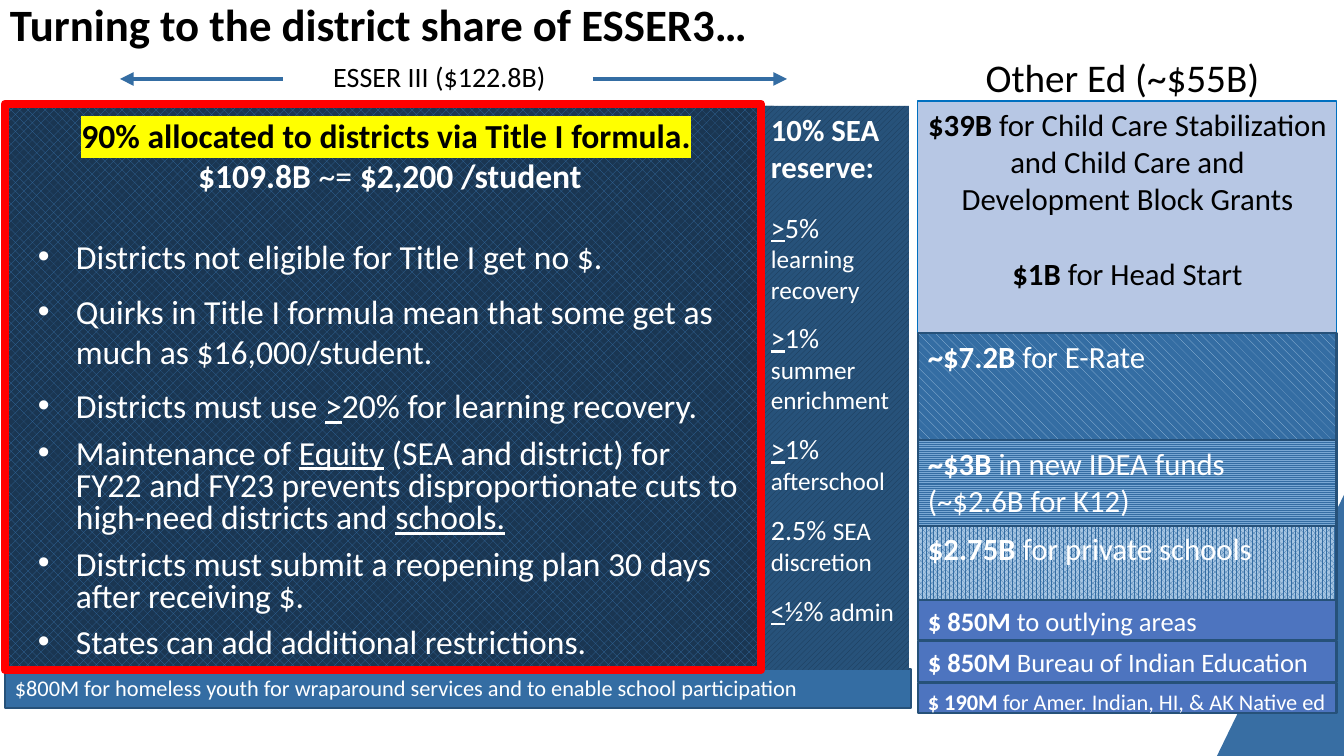
from lxml import etree
from pptx import Presentation, util as u
from pptx.dml.color import RGBColor
from pptx.enum import dml, shapes, text
from pptx.oxml.ns import qn

PX = 914400 / 100.8
COLORS = {
    "white": "FFFFFF", "black": "000000", "blue": "346DA3", "corner": "386EA3", "navy": "1A3652",
    "edge": "265179", "steel": "27527A", "royal": "4D74BF", "lilac": "B7C7E4", "lilac_edge": "0070C0",
    "sky": "A6C5E2", "mist": "79A8D4", "red": "FF0000", "yellow": "FFFF00",
}
PATTERN = dml.MSO_PATTERN
PERCENT_40 = PATTERN(6)
CENTER = {"alignment": text.PP_ALIGN.CENTER}
TIGHT = {"line_spacing": 0.8}
B = {"bold": True}
U = {"underline": True}

CHILD_CARE = [("$39B ", "for Child Care Stabilization and Child Care and Development Block Grants", {}),
              ("$1B ", "for Head Start", {"space_before": u.Pt(27)})]
FUNDS = [
    (333, 108, 22, (PATTERN.DASHED_DOWNWARD_DIAGONAL, "sky", "blue"), "~$7.2B ", "for E-Rate"),
    (525, 75, 22, (PATTERN.PERCENT_75, "blue", "sky"), "$2.75B ", "for private schools"),
    (440, 86, 22, (PATTERN.NARROW_HORIZONTAL, "blue", "mist"), "~$3B ",
     "in new IDEA funds\n(~$2.6B for K12)"),
    (600, 40, 19, "royal", "$ 850M ", "to outlying areas"),
    (641, 41, 19, "royal", "$ 850M ", "Bureau of Indian Education"),
    (683, 30, 16, "royal", "$ 190M ", "for Amer. Indian, HI, & AK Native ed"),
]
HEADLINES = [
    [("90% allocated to districts via Title I formula.",
      {"bold": True, "color": "black", "highlight": "yellow"}), (" ", B)],
    [("$109.8B ", B), ("~= ", {}), ("$2,200 /student", B)],
]
RULES = [
    ({"space_before": u.Pt(29)}, [("Districts not eligible for Title I get no $.", {})]),
    ({}, [("Quirks in Title I formula mean that some get as much as $16,000/student.", {})]),
    ({}, [("Districts must use ", {}), (">", U), ("20% for learning recovery.", {})]),
    (TIGHT, [("Maintenance of ", {}), ("Equity", U),
             (" (SEA and district) for FY22 and FY23 prevents disproportionate cuts to "
              "high-need districts and ", {}), ("schools.", U)]),
    (TIGHT, [("Districts must submit a reopening plan 30 days after receiving $.", {})]),
    (TIGHT, [("States can add additional restrictions.", {})]),
]
RESERVES = [(">", "5% ", "learning recovery"), (">", "1%", "\nsummer enrichment"),
            (">", "1% ", "afterschool"), ("", "2.5% ", "SEA discretion"), ("<", "½%", " admin")]


def px(value):
    """Turn pixels into EMU."""
    return u.Emu(round(value * PX))


def rgb(name):
    """Look up a named colour."""
    return RGBColor.from_string(COLORS[name])


def apply(target, values):
    """Set each attribute in a dict of format values."""
    for name, value in values.items():
        setattr(target, name, value)


def paint(fill, style):
    """Fill with nothing, one colour, or a (pattern, front, back) triple."""
    if style is None:
        fill.background()
    elif isinstance(style, str):
        fill.solid()
        fill.fore_color.rgb = rgb(style)
    else:
        fill.patterned()
        fill.pattern, fill.fore_color.rgb, fill.back_color.rgb = style[0], rgb(style[1]), rgb(style[2])


def finish(shape, fill, edge=None, width=2):
    """Make a shape flat, with its fill and line."""
    shape.shadow.inherit = False
    paint(shape.fill, fill)
    paint(shape.line.fill, edge)
    if edge:
        shape.line.width = u.Pt(width)


def prepare(box):
    """Set the text frame to wrap from the top at a fixed size."""
    apply(box.text_frame, {"word_wrap": True, "auto_size": text.MSO_AUTO_SIZE.NONE,
                           "vertical_anchor": text.MSO_ANCHOR.TOP})
    return box


def add_box(page, area, fill=None, edge=None, width=2):
    """Add a flat rectangle."""
    box = page.shapes.add_shape(shapes.MSO_SHAPE.RECTANGLE, *map(px, area))
    finish(box, fill, edge, width)
    return prepare(box)


def add_label(page, area):
    """Add a wrapping text box."""
    return prepare(page.shapes.add_textbox(*map(px, area)))


def add_span(para, content, size, color="white", highlight=None, **style):
    """Add formatted runs, breaking lines at newlines."""
    for index, piece in enumerate(content.split("\n")):
        if index:
            para.add_line_break()
        if not piece:
            continue
        span = para.add_run()
        span.text = piece
        apply(span.font, {"size": u.Pt(size), "bold": False, "name": "Calibri", **style})
        span.font.color.rgb = rgb(color)
        if highlight:
            mark = etree.Element(qn("a:highlight"))
            etree.SubElement(mark, qn("a:srgbClr"), val=COLORS[highlight])
            span._r.rPr.find(qn("a:solidFill")).addnext(mark)


def add_para(box, spans, size, color="white", bullet=False, **layout):
    """Write a paragraph of spans, using the empty first one if free."""
    para = box.text_frame.paragraphs[0]
    if para.runs:
        para = box.text_frame.add_paragraph()
    if bullet:
        props = para._p.get_or_add_pPr()
        props.set("marL", str(px(38)))
        props.set("indent", str(-px(38)))
        etree.SubElement(props, qn("a:buFont"), typeface="Arial")
        etree.SubElement(props, qn("a:buChar"), char="•")
    apply(para, {"alignment": text.PP_ALIGN.LEFT, **layout})
    for content, style in spans:
        add_span(para, content, **{"size": size, "color": color, **style})


def add_arrow(page, start, end, y):
    """Add a horizontal arrow."""
    arrow = page.shapes.add_connector(shapes.MSO_CONNECTOR.STRAIGHT, px(start), px(y), px(end), px(y))
    paint(arrow.line.fill, "blue")
    arrow.line.width = u.Pt(3.25)
    etree.SubElement(arrow._element.spPr.find(qn("a:ln")), qn("a:tailEnd"), type="triangle")
    etree.SubElement(arrow._element.spPr, qn("a:effectLst"))


def add_corner(page):
    """Add the triangle in the bottom right corner."""
    builder = page.shapes.build_freeform(1344, 495, scale=PX)
    builder.add_line_segments([(1217, 756), (1344, 756)], close=True)
    finish(builder.convert_to_shape(), "corner")


def add_funds(page):
    """Add the column of other education funds."""
    care = add_box(page, (918, 101, 419, 258), "lilac", "lilac_edge", 0.75)
    for amount, purpose, layout in CHILD_CARE:
        add_para(care, [(amount, B), (purpose, {})], 22, "black", **CENTER, **layout)
    for top, height, size, fill, amount, purpose in FUNDS:
        box = add_box(page, (918, top, 419, height), fill, "edge")
        add_para(box, [(amount, B), (purpose, {})], size)


def add_esser(page):
    """Add the district rules and the state reserve inside their panels."""
    rules = add_label(page, (28, 110, 724, 616))
    for spans in HEADLINES:
        add_para(rules, spans, 24, **CENTER)
    for layout, spans in RULES:
        add_para(rules, spans, 24, bullet=True, space_after=u.Pt(10), **layout)
    reserve = add_box(page, (761, 106, 148, 564), (PATTERN.WIDE_UPWARD_DIAGONAL, "navy", "steel"))
    add_para(reserve, [("10% SEA reserve:", B)], 22, space_after=u.Pt(18))
    for sign, share, purpose in RESERVES:
        spans = [(sign, U), (share, {}), (purpose, {"size": 18})]
        add_para(reserve, spans, 20, space_after=u.Pt(12))
    add_box(page, (5, 104, 756, 566), None, "red", 6)


def main():
    """Build the slide and save it."""
    deck = Presentation()
    deck.slide_width, deck.slide_height = px(1344), px(756)
    page = deck.slides.add_slide(deck.slide_layouts[6])
    add_corner(page)
    add_box(page, (7, 106, 767, 564), (PERCENT_40, "blue", "navy"))
    homeless = add_box(page, (5, 669, 906, 39), "blue", "edge")
    add_para(homeless, [("$800M for homeless youth for wraparound services and to enable "
                         "school participation", {})], 16)
    title = add_box(page, (0, 2, 1344, 44), "white")
    title.text_frame.vertical_anchor = text.MSO_ANCHOR.MIDDLE
    add_para(title, [("Turning to the district share of ESSER3…", B)], 32, "black")
    add_funds(page)
    for start, end in ((283, 120), (593, 787)):
        add_arrow(page, start, end, 79)
    add_para(add_label(page, (225, 55, 429, 44)), [("ESSER III ($122.8B)", {})], 20, "black", **CENTER)
    add_para(add_label(page, (908, 48, 429, 57)), [("Other Ed (~$55B)", {})], 28, "black", **CENTER)
    add_esser(page)
    deck.save("out.pptx")


if __name__ == "__main__":
    main()
